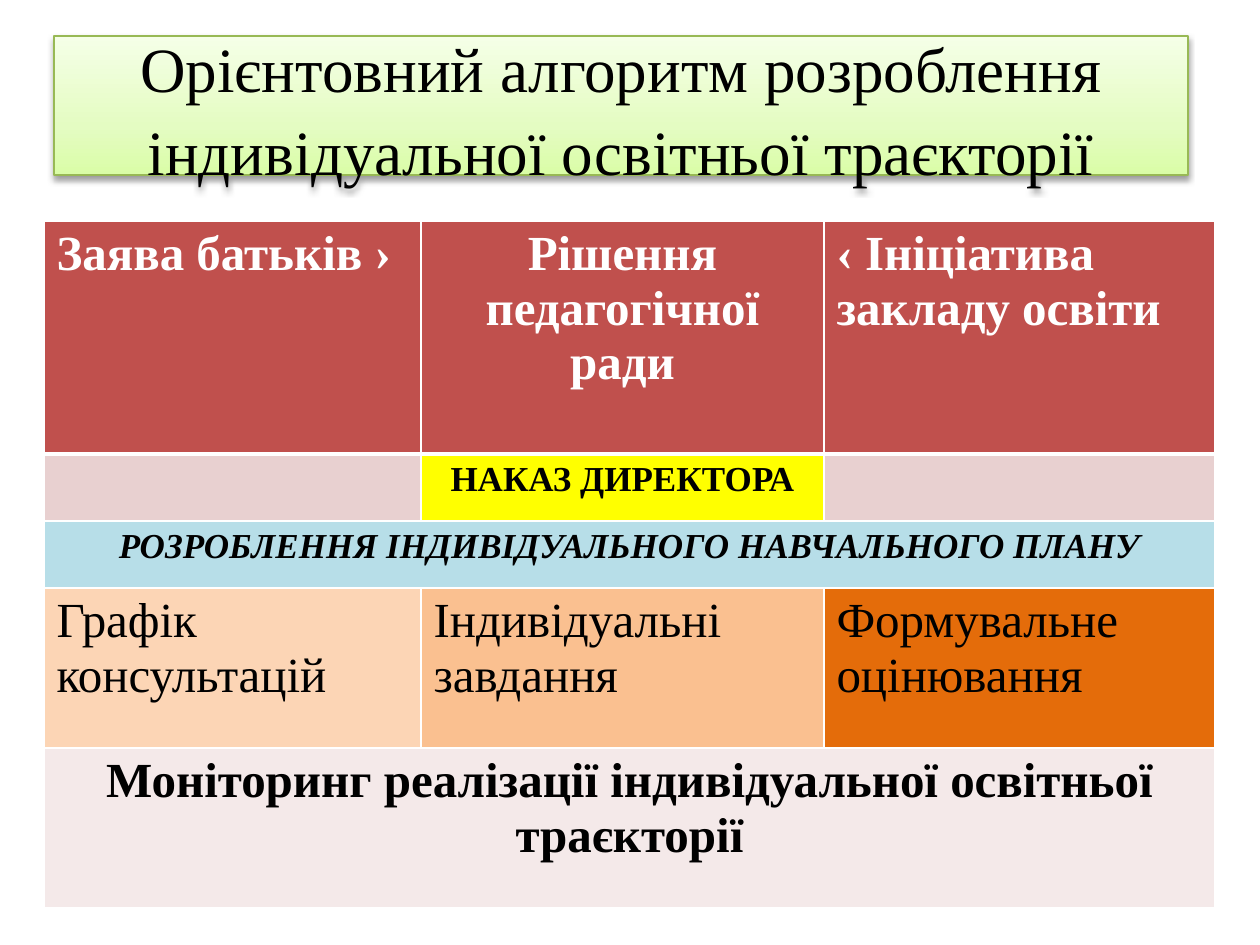
from lxml.etree import SubElement
from pptx import Presentation
from pptx.dml.color import RGBColor
from pptx.enum.text import MSO_ANCHOR, MSO_AUTO_SIZE, PP_ALIGN
from pptx.oxml import parse_xml
from pptx.oxml.ns import nsdecls, qn
from pptx.util import Emu, Pt

PX = 914400 // 126
WHITE, BLACK = "FFFFFF", "000000"


def rgb(value):
    """Return the colour for a hex string."""
    return RGBColor.from_string(value)


def write(frame, text, size=28, color=BLACK, bold=False, italic=False,
          center=False, spacing=None, font="Times New Roman"):
    """Fill a text frame with one formatted paragraph."""
    paragraph = frame.paragraphs[0]
    paragraph.alignment = PP_ALIGN.CENTER if center else PP_ALIGN.LEFT
    paragraph.line_spacing = spacing
    run = paragraph.add_run()
    run.text = text
    run.font.name, run.font.size = font, Pt(size)
    run.font.bold, run.font.italic = bold, italic
    run.font.color.rgb = rgb(color)


class AlgorithmSlide:
    """Hold the style and the current slide."""

    gradient = ((0, "DAFDA7"), (35, "E4FCC2"), (100, "F5FFE7"))
    outline = "98B955"

    def __init__(self, deck):
        """Add a title-only slide to the deck."""
        self.slide = deck.slides.add_slide(deck.slide_layouts[5])

    def title(self, text, left, top, width, height):
        """Format the title placeholder as a shaded banner."""
        banner = self.slide.shapes.title
        banner.left, banner.top, banner.width, banner.height = (
            Emu(n * PX) for n in (left, top, width, height))
        banner.fill.gradient()
        banner.fill.gradient_angle = 90
        properties = banner.element.spPr
        stops = properties.find(".//" + qn("a:gsLst"))
        stops.clear()
        for position, color in self.gradient:
            stop = SubElement(stops, qn("a:gs"), pos=str(position * 1000))
            SubElement(stop, qn("a:srgbClr"), val=color)
        banner.line.color.rgb = rgb(self.outline)
        banner.line.width = Pt(0.75)
        properties.append(parse_xml(
            f'<a:effectLst {nsdecls("a")}><a:outerShdw blurRad="{Pt(3.1)}" '
            f'dist="{Pt(1.6)}" dir="5400000" rotWithShape="0">'
            f'<a:srgbClr val="{BLACK}"><a:alpha val="38000"/></a:srgbClr>'
            '</a:outerShdw></a:effectLst>'))
        frame = banner.text_frame
        frame.auto_size = MSO_AUTO_SIZE.NONE
        frame.word_wrap = True
        frame.vertical_anchor = MSO_ANCHOR.MIDDLE
        write(frame, text, size=36, center=True, spacing=1.09)

    def cell(self, cell, fill, text="", top=1, bottom=1, **style):
        """Fill, border and write one table cell."""
        cell.fill.solid()
        cell.fill.fore_color.rgb = rgb(fill)
        widths = (("L", 1), ("R", 1), ("T", top), ("B", bottom))
        for index, (side, width) in enumerate(widths):
            cell._tc.tcPr.insert(index, parse_xml(
                f'<a:ln{side} {nsdecls("a")} w="{Pt(width)}"><a:solidFill>'
                f'<a:srgbClr val="{WHITE}"/></a:solidFill></a:ln{side}>'))
        if text:
            write(cell.text_frame, text, **style)

    def table(self, left, top, widths, heights, rows):
        """Add a table whose one-item rows span every column."""
        grid = self.slide.shapes.add_table(
            len(heights), len(widths), Emu(left * PX), Emu(top * PX),
            Emu(sum(widths) * PX), Emu(sum(heights) * PX)).table
        grid.first_row = grid.horz_banding = False
        for column, width in zip(grid.columns, widths):
            column.width = Emu(width * PX)
        for row, height in zip(grid.rows, heights):
            row.height = Emu(height * PX)
        for r, steps in enumerate(rows):
            if len(steps) == 1:
                grid.cell(r, 0).merge(grid.cell(r, len(widths) - 1))
            for c, step in enumerate(steps):
                self.cell(grid.cell(r, c), **step)


def main():
    """Build and save the slide."""
    deck = Presentation()
    deck.slide_width, deck.slide_height = Emu(1260 * PX), Emu(945 * PX)
    page = AlgorithmSlide(deck)
    page.title("Орієнтовний алгоритм розроблення індивідуальної освітньої траєкторії",
               54, 36, 1134, 139)
    header = dict(fill="C0504D", color=WHITE, bold=True, bottom=3)
    side = dict(fill="E8D0D0", top=3)
    rows = [
        [dict(header, text="Заява батьків ›"),
         dict(header, text="Рішення педагогічної ради", center=True),
         dict(header, text="‹ Ініціатива закладу освіти")],
        [side,
         dict(fill="FFFF00", text="НАКАЗ ДИРЕКТОРА", top=3, size=20,
              bold=True, center=True),
         side],
        [dict(fill="B7DEE8", text="РОЗРОБЛЕННЯ ІНДИВІДУАЛЬНОГО НАВЧАЛЬНОГО ПЛАНУ",
              size=20, bold=True, italic=True, center=True)],
        [dict(fill="FCD5B5", text="Графік консультацій"),
         dict(fill="FAC090", text="Індивідуальні завдання"),
         dict(fill="E46C0A", text="Формувальне оцінювання")],
        [dict(fill="F4E9E9", bold=True, center=True,
              text="Моніторинг реалізації індивідуальної освітньої траєкторії")],
    ]
    page.table(44, 221, (377, 403, 391), (233, 67, 67, 160, 160), rows)
    deck.save("out.pptx")


if __name__ == "__main__":
    main()
